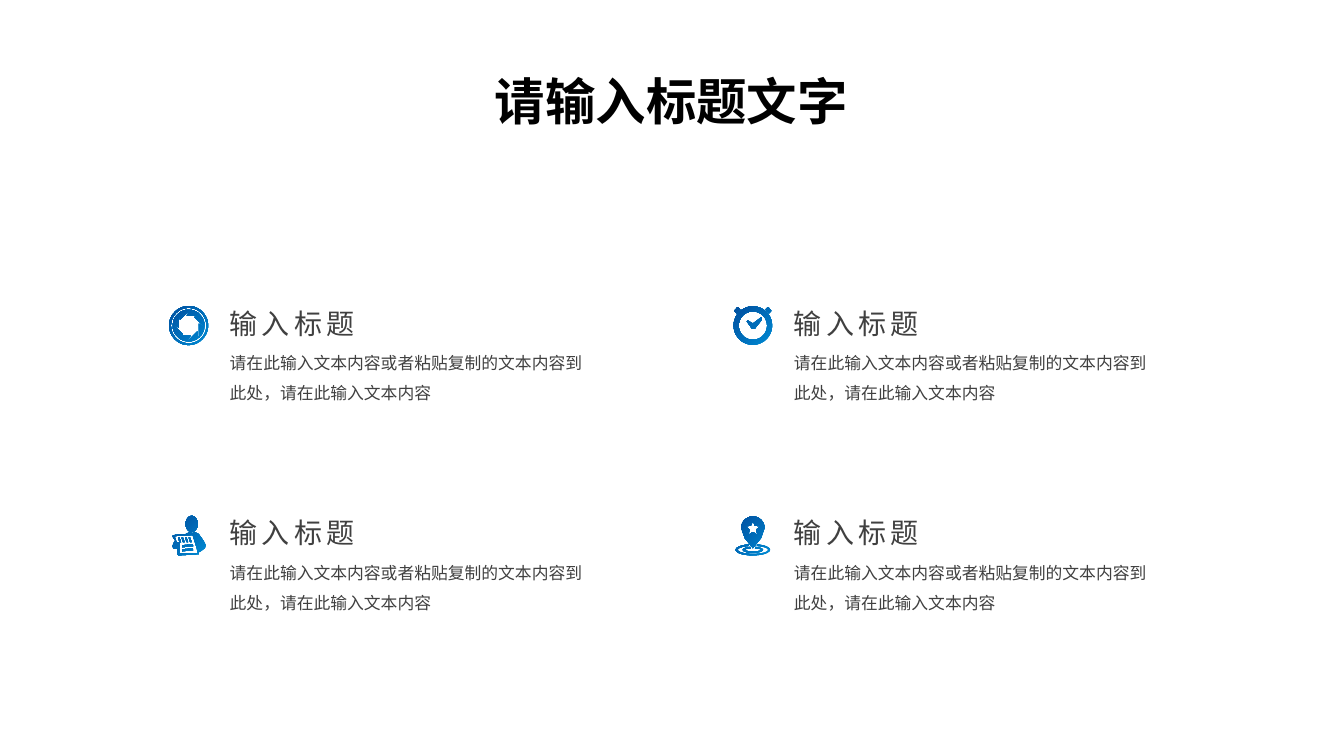
from math import cos, sin, radians

from pptx import Presentation
from pptx.dml.color import RGBColor
from pptx.enum.text import MSO_AUTO_SIZE, PP_ALIGN
from pptx.util import Cm, Pt

BLACK = RGBColor(0x00, 0x00, 0x00)
GREY = RGBColor(0x40, 0x40, 0x40)
LIGHT = RGBColor(0x00, 0x8A, 0xD3)
DARK = RGBColor(0x01, 0x4E, 0x9E)
CENTER = PP_ALIGN.CENTER
LEFT = PP_ALIGN.LEFT
GROW = MSO_AUTO_SIZE.SHAPE_TO_FIT_TEXT

HEAD = "输入标题"
BODY = "请在此输入文本内容或者粘贴复制的文本内容到此处，请在此输入文本内容"
GRID = 38  # icon outlines are drawn on a 38 x 38 grid
FINE = 100  # steps per grid unit


def arc(x, y, rx, ry, start=0, end=360):
    """Points along an ellipse, angles clockwise from the right."""
    turns = [radians(start + (end - start) * i / 40) for i in range(41)]
    return [(x + rx * cos(t), y + ry * sin(t)) for t in turns]


def disc(r):
    return arc(19, 19, r, r)


def spin(points, angle):
    """Turn points given about the icon centre."""
    c, s = cos(radians(angle)), sin(radians(angle))
    return [(19 + x * c - y * s, 19 + x * s + y * c) for x, y in points]


def lens():
    blade = [(-12, 10), (2, 10), (-2, 15.5), (-5, 15), (-9, 13)]
    return [disc(19.3), disc(17.5)] + [spin(blade, 45 * i) for i in range(8)]


def clock():
    ear = [(31.5, 3), (33.5, 0.8), (34.5, 1), (37, 4), (37, 5), (35, 7)]
    twin = [(38 - x, y) for x, y in ear]
    tick = [(27, 11), (28, 11), (28, 13), (21, 22), (18, 22),
            (13, 15), (14, 14), (19, 17)]
    return [disc(19), disc(14), ear, twin, tick]


def person():
    head = arc(22, 8, 6, 8)
    torso = [(20, 16), (22, 17), (23, 17), (25, 16), (29, 18), (34, 25),
             (36, 29), (35, 32), (31, 35), (29, 36), (29, 38), (9, 39),
             (8, 38), (8, 32), (4, 32), (3, 30), (5, 25), (6, 25),
             (3, 20), (4, 19), (16, 18)]
    sheet = [(23, 19), (5, 20), (7, 26), (10, 26), (10, 37), (28, 37),
             (27, 32)]
    arm = [(29, 26), (29, 30), (30, 29)]
    marks = [[(x, 21.5), (x + 1.5, 21.5), (x + 3, 26), (x + 1.5, 26)]
             for x in (8.5, 12, 15.5, 19)]
    rows = [[(12.5, y), (23, y - 1), (23.5, y + 1), (12.5, y + 2)]
            for y in (29, 33)]
    return [head, torso, sheet, arm] + marks + rows


def pin():
    drop = arc(19, 12, 11.5, 11.5, 180, 360) + [(27, 22), (19, 32), (11, 22)]
    star = []
    for i in range(10):
        r = 3.4 if i % 2 else 7.5
        t = radians(36 * i - 90)
        star.append((19 + r * cos(t), 12.5 + r * sin(t)))
    rings = [arc(19, 33.5, rx, ry, -75, 255)
             + arc(19, 33.5, rx - 2, ry - 1.5, 255, -75)
             for rx, ry in ((17, 5.5), (10, 3))]
    return [drop, star] + rings


class Deck:
    def __init__(self):
        self.show = Presentation()
        self.show.slide_width = Cm(33.87)
        self.show.slide_height = Cm(19.05)
        self.slide = self.show.slides.add_slide(self.show.slide_layouts[6])
        self.shapes = self.slide.shapes

    def text(self, words, x, y, w, h, size, font="Arial", color=GREY,
             bold=False, align=LEFT, wrap=True, lines=None, gap=0):
        """Add a text box; gap is the letter spacing in points."""
        box = self.shapes.add_textbox(Cm(x), Cm(y), Cm(w), Cm(h))
        frame = box.text_frame
        frame.word_wrap = wrap
        frame.auto_size = GROW
        par = frame.paragraphs[0]
        run = par.add_run()
        run.text = words
        par.alignment = align
        if lines:
            par.line_spacing = lines
        par.font.size = Pt(size)
        par.font.name = font
        par.font.bold = bold
        par.font.color.rgb = color
        if gap:
            run._r.get_or_add_rPr().set("spc", str(gap * 100))

    def icon(self, parts, x, y):
        """Draw closed outlines as one shape; inner ones cut holes."""
        pen = None
        for part in parts:
            first, *rest = [(px * FINE, py * FINE) for px, py in part]
            if pen is None:
                pen = self.shapes.build_freeform(
                    *first, scale=Cm(0.97) / (GRID * FINE))
            else:
                pen.move_to(*first)
            pen.add_line_segments(rest, close=True)
        shape = pen.convert_to_shape(Cm(x), Cm(y))
        shape.shadow.inherit = False
        shape.line.fill.background()
        shape.fill.gradient()
        shape.fill.gradient_angle = 135
        for stop, color in zip(shape.fill.gradient_stops, (LIGHT, DARK)):
            stop.color.rgb = color

    def item(self, parts, x, y):
        self.text(HEAD, x + 1.27, y - 0.13, 6.48, 1.12, 20, gap=3)
        self.text(BODY, x + 1.27, y + 0.79, 9.5, 1.7, 12, lines=1.5)
        self.icon(parts, x, y)


def main():
    deck = Deck()
    icons = (lens(), clock(), person(), pin())
    for i, parts in enumerate(icons):
        row, col = divmod(i, 2)
        deck.item(parts, 4.27 + 14.22 * col, 7.72 + 5.28 * row)
    deck.text("请输入标题文字", 12.22, 1.63, 9.4, 1.8, 36, "Noto Sans CJK SC",
              BLACK, bold=True, align=CENTER, wrap=False)
    deck.show.save("out.pptx")


if __name__ == "__main__":
    main()
